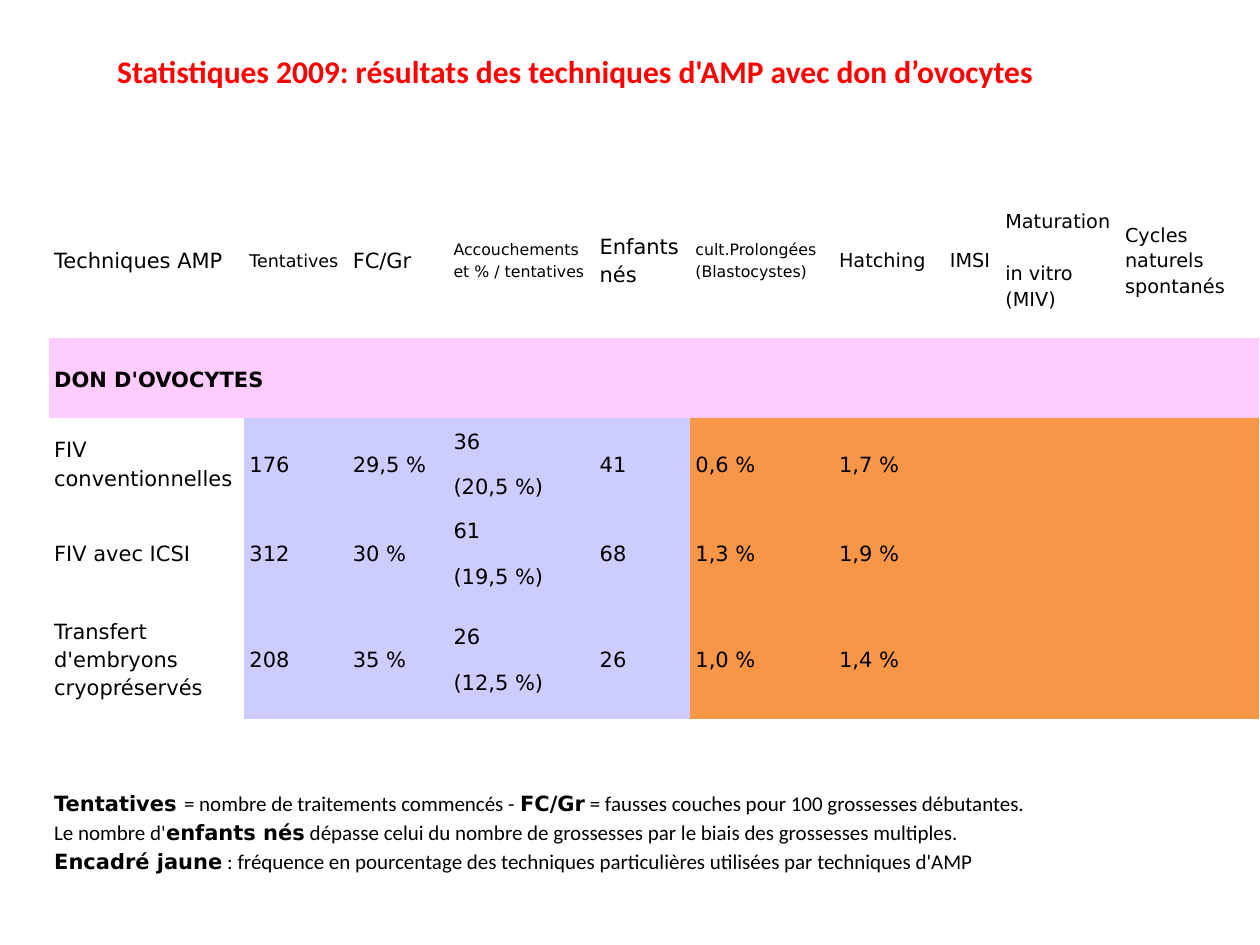
"""Build the slide of 2009 assisted reproduction results with egg donation."""
from dataclasses import dataclass

from lxml import etree
from pptx import Presentation
from pptx import util as u
from pptx.dml.color import RGBColor
from pptx.enum import text
from pptx.oxml.ns import qn

SLIDE_W, SLIDE_H = u.Inches(10), u.Inches(7.5)
COLUMNS = [1.55, 0.82, 0.8, 1.16, 0.76, 1.14, 0.88, 0.44, 0.2, 0.75, 1.1]
ROWS = [1.24, 0.64, 0.71, 0.71, 0.97, 1.78]
LABEL_FONT, PROSE_FONT = "DejaVu Sans", "Calibri"
BLACK, RED = "000000", "FF0000"
PINK, LAVENDER, ORANGE = "FFCCFF", "CCCCFF", "F79646"
NO_STYLE_NO_GRID = "{2D5ABB26-0587-4C30-8999-92F81FD0307C}"


@dataclass(frozen=True)
class Entry:
    """Content and look of one table cell."""
    paragraphs: tuple = ()
    size: float = 12
    bold: bool = False
    fill: str = ""
    gap: float = 10


@dataclass(frozen=True)
class Technique:
    """Results of one technique."""
    name: str
    attempts: str
    miscarriages: str
    births: tuple
    children: str
    blastocysts: str
    hatching: str


HEADINGS = {
    0: Entry(("Techniques AMP",)),
    1: Entry(("Tentatives",), 10),
    2: Entry(("FC/Gr",)),
    3: Entry(("Accouchements\net % / tentatives",), 9, gap=0),
    4: Entry(("Enfants nés",)),
    5: Entry(("cult.Prolongées\n(Blastocystes)",), 9),
    6: Entry(("Hatching",), 11),
    7: Entry(("IMSI",), 11),
    8: Entry(("Maturation", "in vitro (MIV)"), 11, gap=15),
    10: Entry(("Cycles naturels\nspontanés",), 11),
}
TECHNIQUES = [
    Technique("FIV conventionnelles", "176", "29,5 %", ("36", "(20,5 %)"), "41", "0,6 %", "1,7 %"),
    Technique("FIV avec ICSI", "312", "30 %", ("61", "(19,5 %)"), "68", "1,3 %", "1,9 %"),
    Technique("Transfert d'embryons\ncryopréservés", "208", "35 %", ("26", "(12,5 %)"),
              "26", "1,0 %", "1,4 %"),
]
DEFINITIONS = [
    [("Tentatives ", True), ("= nombre de traitements commencés - ", False),
     ("FC/Gr", True), (" = fausses couches pour 100 grossesses débutantes.", False)],
    [("Le nombre d'", False), ("enfants nés", True),
     (" dépasse celui du nombre de grossesses par le biais des grossesses multiples.", False)],
    [("Encadré jaune", True),
     (" : fréquence en pourcentage des techniques particulières utilisées"
      " par techniques d'AMP", False)],
]


def colour(value: str) -> RGBColor:
    """Turn a hex string into a colour."""
    return RGBColor.from_string(value)


def style_run(run, size: float, bold: bool, font: str = LABEL_FONT, ink: str = BLACK) -> None:
    """Set the typeface, size, weight and colour of a run."""
    run.font.name, run.font.size, run.font.bold = font, u.Pt(size), bold
    run.font.color.rgb = colour(ink)


def space_paragraph(paragraph, gap: float, size: float) -> None:
    """Set the spacing and give line breaks the size of their text."""
    paragraph.line_spacing, paragraph.space_after = 1.15, u.Pt(gap)
    for line_break in paragraph._p.findall(qn("a:br")):
        etree.SubElement(line_break, qn("a:rPr"), sz=str(int(size * 100)))


def prepare_cell(cell, fill: str = "") -> None:
    """Set the margins, anchor and fill of a cell."""
    cell.margin_left = cell.margin_right = u.Inches(0.04)
    cell.margin_top = cell.margin_bottom = u.Inches(0.04)
    cell.vertical_anchor = text.MSO_ANCHOR.MIDDLE
    if fill:
        cell.fill.solid()
        cell.fill.fore_color.rgb = colour(fill)
    else:
        cell.fill.background()


def fill_cell(cell, entry: Entry) -> None:
    """Write an entry into a cell."""
    prepare_cell(cell, entry.fill)
    frame = cell.text_frame
    for index, line in enumerate(entry.paragraphs):
        paragraph = frame.add_paragraph() if index else frame.paragraphs[0]
        paragraph.text = line
        space_paragraph(paragraph, entry.gap, entry.size)
        for run in paragraph.runs:
            style_run(run, entry.size, entry.bold)


def write_definitions(cell) -> None:
    """Write the definitions under the results."""
    prepare_cell(cell)
    paragraph = cell.text_frame.paragraphs[0]
    for index, line in enumerate(DEFINITIONS):
        if index:
            paragraph.add_line_break()
        for words, is_term in line:
            run = paragraph.add_run()
            run.text = words
            style_run(run, 12, is_term, LABEL_FONT if is_term else PROSE_FONT)
    space_paragraph(paragraph, 10, 12)


def technique_entries(technique: Technique) -> list[Entry]:
    """List the cells of a technique from left to right."""
    values = [(technique.attempts,), (technique.miscarriages,), technique.births,
              (technique.children,), (technique.blastocysts,), (technique.hatching,)]
    values += [()] * (len(COLUMNS) - 1 - len(values))
    return [Entry((technique.name,))] + [
        Entry(value, fill=LAVENDER if index < 4 else ORANGE)
        for index, value in enumerate(values)]


def write_title(title) -> None:
    """Place and format the slide title."""
    title.left, title.top = int(SLIDE_W * 0.083), int(SLIDE_H * 0.048)
    title.width, title.height = int(SLIDE_W * 0.945), int(SLIDE_H * 0.053)
    frame = title.text_frame
    frame.text = "Statistiques 2009: résultats des techniques d'AMP avec don d’ovocytes"
    frame.word_wrap = True
    frame.auto_size = text.MSO_AUTO_SIZE.SHAPE_TO_FIT_TEXT
    frame.vertical_anchor = text.MSO_ANCHOR.TOP
    frame.paragraphs[0].alignment = text.PP_ALIGN.LEFT
    style_run(frame.paragraphs[0].runs[0], 18, True, PROSE_FONT, RED)


def draw_results(slide) -> None:
    """Draw the table of results."""
    results = slide.shapes.add_table(
        len(ROWS), len(COLUMNS), int(SLIDE_W * 0.039), int(SLIDE_H * 0.192),
        u.Inches(sum(COLUMNS)), u.Inches(sum(ROWS))).table
    results.first_row = results.horz_banding = False
    results._tbl.tblPr.find(qn("a:tableStyleId")).text = NO_STYLE_NO_GRID
    for column, width in zip(results.columns, COLUMNS):
        column.width = u.Inches(width)
    for row, height in zip(results.rows, ROWS):
        row.height = u.Inches(height)

    last_row, last_column = len(ROWS) - 1, len(COLUMNS) - 1
    section = Entry(("DON D'OVOCYTES",), bold=True, fill=PINK)
    for column in range(len(COLUMNS)):
        fill_cell(results.cell(0, column), HEADINGS.get(column, Entry()))
    fill_cell(results.cell(1, 0), section)
    for row, technique in enumerate(TECHNIQUES, start=2):
        for column, entry in enumerate(technique_entries(technique)):
            fill_cell(results.cell(row, column), entry)
        results.cell(row, 7).merge(results.cell(row, 8))
    write_definitions(results.cell(last_row, 0))

    results.cell(0, 8).merge(results.cell(0, 9))
    for row in (1, last_row):
        results.cell(row, 0).merge(results.cell(row, last_column))


def main() -> None:
    """Build and save the presentation."""
    deck = Presentation()
    deck.slide_width, deck.slide_height = SLIDE_W, SLIDE_H
    slide = deck.slides.add_slide(deck.slide_layouts[5])
    draw_results(slide)
    write_title(slide.shapes.title)
    deck.save("out.pptx")


if __name__ == "__main__":
    main()
